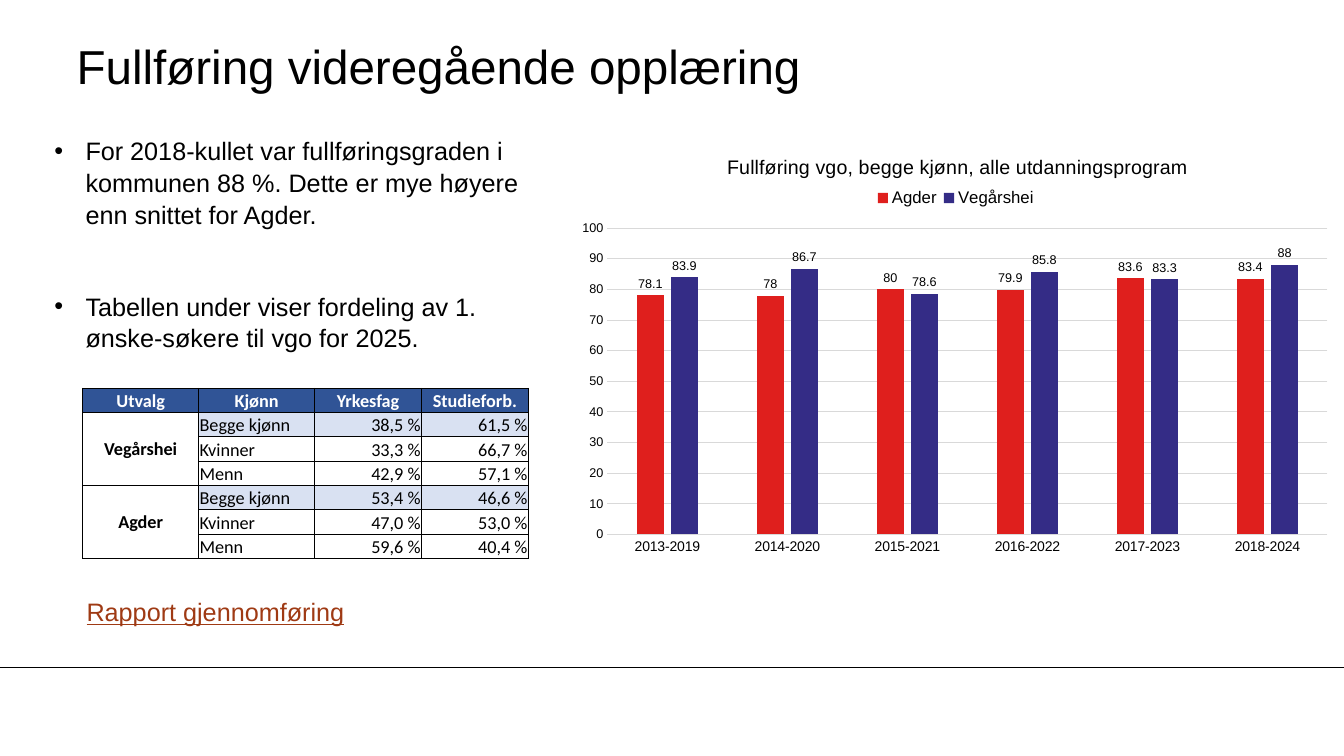
"""Build the slide on completion of upper secondary school in Vegårshei and Agder."""
from lxml import etree
from pptx import Presentation
from pptx import util as u
from pptx.chart import data as cd
from pptx.dml.color import RGBColor
from pptx.enum import chart as ch
from pptx.enum import shapes, text
from pptx.oxml import parse_xml
from pptx.oxml.ns import nsdecls, qn

HUES = {"black": "000000", "white": "FFFFFF", "head": "305496", "band": "D9E1F2",
        "grid": "D9D9D9", "link": "9F3A14", "Agder": "DF1F1D", "Vegårshei": "342C86"}


def style(font, size, hue="black", name="Arial", bold=False):
    font.size, font.name, font.bold = u.Pt(size), name, bold
    font.color.rgb = RGBColor.from_string(HUES[hue])


def place(node, x, y, w=None, h=None, inner=False):
    old = node.find(qn("c:layout"))
    if old is not None:
        node.remove(old)
    tags = [("layoutTarget", "inner")] if inner else []
    tags += [("xMode", "edge"), ("yMode", "edge"), ("x", x), ("y", y)]
    tags += [("w", w), ("h", h)] if w else []
    body = "".join(f'<c:{tag} val="{val}"/>' for tag, val in tags)
    lay = parse_xml(f'<c:layout {nsdecls("c")}><c:manualLayout>{body}</c:manualLayout></c:layout>')
    prior = [kid for kid in node if kid.tag in (qn("c:tx"), qn("c:legendPos"))]
    node.insert(len(prior), lay)


prs = Presentation()
prs.slide_width, prs.slide_height = u.Inches(13.33), u.Inches(7.5)
slide = prs.slides.add_slide(prs.slide_layouts[6])

rule = slide.shapes.add_connector(shapes.MSO_CONNECTOR.STRAIGHT, 0, u.Inches(6.62),
                                  u.Inches(13.33), u.Inches(6.62))
rule.line.color.rgb = RGBColor.from_string(HUES["black"])
rule.line.width = u.Pt(0.75)
etree.SubElement(rule._element.spPr, qn("a:effectLst"))

title = slide.shapes.add_textbox(*map(u.Inches, (0.76, 0.27, 11.1, 0.75))).text_frame
title.word_wrap = True
title.vertical_anchor = text.MSO_ANCHOR.MIDDLE
title.margin_left = title.margin_right = title.margin_top = title.margin_bottom = 0
title.text = "Fullføring videregående opplæring"
style(title.paragraphs[0].font, 34)

points = ["For 2018-kullet var fullføringsgraden i kommunen 88 %. "
          "Dette er mye høyere enn snittet for Agder.",
          "Tabellen under viser fordeling av 1. ønske-søkere til vgo for 2025."]
body = slide.shapes.add_textbox(*map(u.Inches, (0.44, 1.28, 5.17, 2.22))).text_frame
body.word_wrap = True
body.text = "\n".join(points)
for i, par in enumerate(body.paragraphs):
    props = par._p.get_or_add_pPr()
    props.set("marL", str(u.Inches(0.31)))
    props.set("indent", str(u.Inches(-0.31)))
    etree.SubElement(props, qn("a:buFont")).set("typeface", "Arial")
    etree.SubElement(props, qn("a:buChar")).set("char", "•")
    par.line_spacing = 1.05
    if i:
        par.space_before = u.Pt(43)
    style(par.font, 18)

rows = [("Utvalg", "Kjønn", "Yrkesfag", "Studieforb."),
        ("Vegårshei", "Begge kjønn", "38,5 %", "61,5 %"),
        ("", "Kvinner", "33,3 %", "66,7 %"),
        ("", "Menn", "42,9 %", "57,1 %"),
        ("Agder", "Begge kjønn", "53,4 %", "46,6 %"),
        ("", "Kvinner", "47,0 %", "53,0 %"),
        ("", "Menn", "59,6 %", "40,4 %")]
table = slide.shapes.add_table(7, 4, *map(u.Inches, (0.82, 3.85, 4.42, 1.69))).table
table.first_row = table.horz_banding = False
for col, wide in zip(table.columns, (1.15, 1.15, 1.06, 1.06)):
    col.width = u.Inches(wide)
for r, row in enumerate(rows):
    table.rows[r].height = u.Inches(1.69 / 7)
    for c, word in enumerate(row):
        cell = table.cell(r, c)
        cell.text = word
        cell.margin_left = cell.margin_right = cell.margin_top = u.Inches(0.01)
        cell.margin_bottom = 0
        side = r > 0 and c == 0
        cell.vertical_anchor = text.MSO_ANCHOR.MIDDLE if side else text.MSO_ANCHOR.BOTTOM
        par = cell.text_frame.paragraphs[0]
        if r == 0 or c == 0:
            par.alignment = text.PP_ALIGN.CENTER
        else:
            par.alignment = text.PP_ALIGN.RIGHT if c > 1 else text.PP_ALIGN.LEFT
        style(par.font, 13, "black" if r else "white", "Calibri", r == 0 or c == 0)
        for edge in ("lnL", "lnR", "lnT", "lnB"):
            line = etree.SubElement(cell._tc.get_or_add_tcPr(), qn(f"a:{edge}"), w=str(u.Pt(0.5)))
            fill = etree.SubElement(line, qn("a:solidFill"))
            etree.SubElement(fill, qn("a:srgbClr"), val=HUES["black"])
        cell.fill.solid()
        hue = "head" if r == 0 else "band" if r in (1, 4) and c else "white"
        cell.fill.fore_color.rgb = RGBColor.from_string(HUES[hue])
for top in (1, 4):
    table.cell(top, 0).merge(table.cell(top + 2, 0))

link = slide.shapes.add_textbox(*map(u.Inches, (0.76, 5.87, 2.81, 0.4))).text_frame
link.word_wrap = True
link.text = "Rapport gjennomføring"
style(link.paragraphs[0].font, 18, "link")
link.paragraphs[0].font.underline = True

data = cd.CategoryChartData()
data.categories = [f"{year}-{year + 6}" for year in range(2013, 2019)]
data.add_series("Agder", (78.1, 78, 80, 79.9, 83.6, 83.4))
data.add_series("Vegårshei", (83.9, 86.7, 78.6, 85.8, 83.3, 88))
chart = slide.shapes.add_chart(ch.XL_CHART_TYPE.COLUMN_CLUSTERED,
                               *map(u.Inches, (5.64, 1.28, 7.68, 4.28)), data).chart
style(chart.font, 10)
chart.has_title = True
head = chart.chart_title.text_frame
head.text = "Fullføring vgo, begge kjønn, alle utdanningsprogram"
style(head.paragraphs[0].font, 14)
chart.has_legend = True
chart.legend.position = ch.XL_LEGEND_POSITION.TOP
chart.legend.include_in_layout = False
style(chart.legend.font, 12)
place(chart.chart_title._element, 0.2, 0.05)
place(chart.legend._element, 0.39, 0.13, 0.22, 0.06)
place(chart._chartSpace.chart.plotArea, 0.05, 0.23, 0.93, 0.71, True)

cats, vals = chart.category_axis, chart.value_axis
for axis, size in ((cats, 10), (vals, 9)):
    axis.major_tick_mark = axis.minor_tick_mark = ch.XL_TICK_MARK.NONE
    style(axis.tick_labels.font, size)
vals.minimum_scale, vals.maximum_scale, vals.major_unit = 0, 100, 10
vals.tick_labels.number_format = "#,##0"
vals.tick_labels.number_format_is_linked = False
vals.format.line.fill.background()
for line in (cats.format.line, vals.major_gridlines.format.line):
    line.color.rgb = RGBColor.from_string(HUES["grid"])
    line.width = u.Pt(0.75)

plot = chart.plots[0]
plot.vary_by_categories = False
plot.gap_width, plot.overlap = 219, -27
for bars in plot.series:
    bars.format.fill.solid()
    bars.format.fill.fore_color.rgb = RGBColor.from_string(HUES[bars.name])
    marks = bars.data_labels
    marks.show_value = True
    marks.position = ch.XL_LABEL_POSITION.OUTSIDE_END
    style(marks.font, 9)

prs.save("out.pptx")
